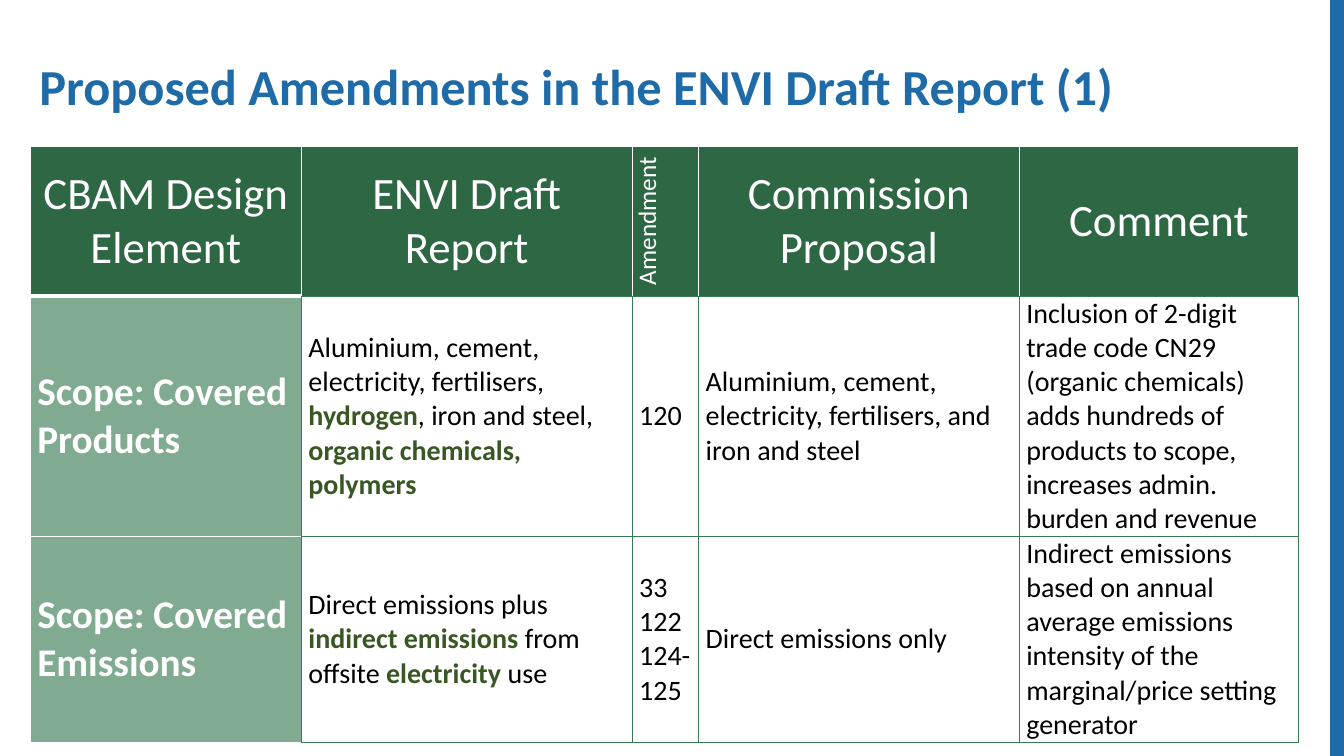
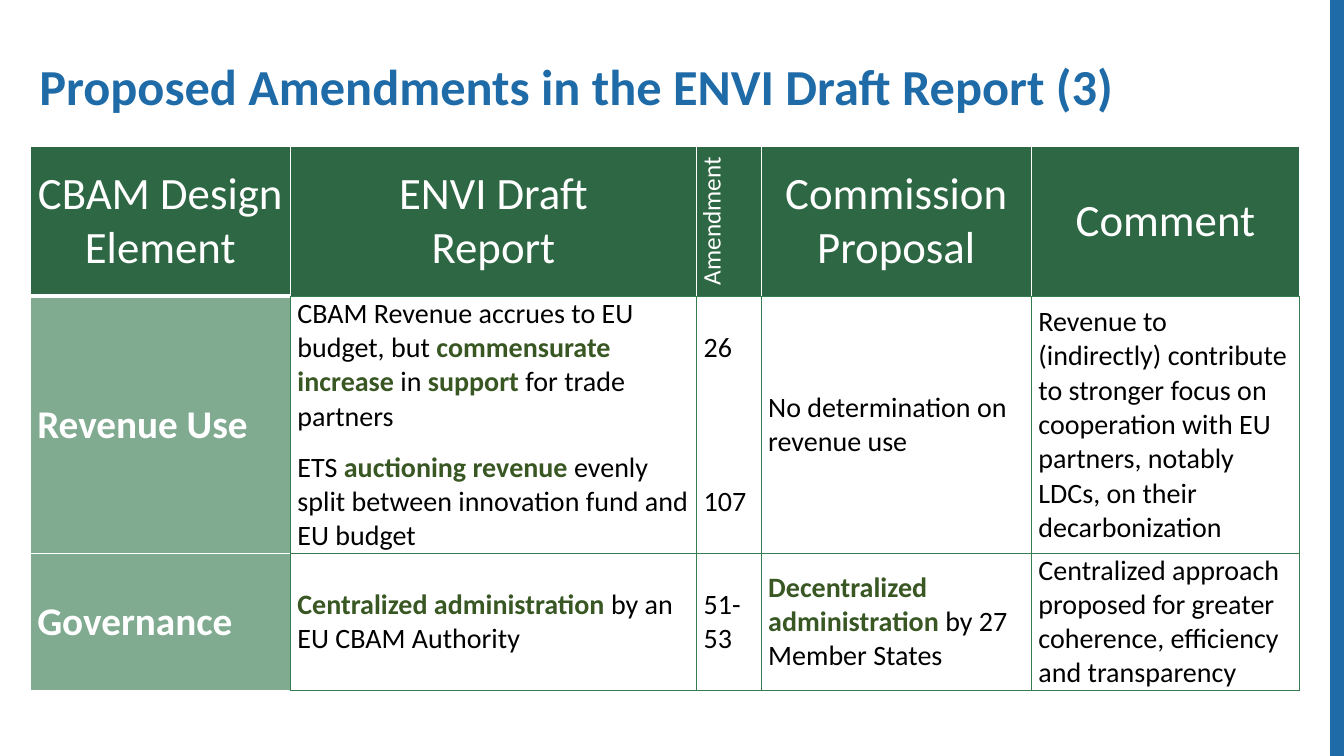
from dataclasses import dataclass

from lxml.etree import SubElement
from pptx import Presentation
from pptx.dml.color import RGBColor
from pptx.enum.shapes import MSO_CONNECTOR
from pptx.enum.text import MSO_ANCHOR, PP_ALIGN
from pptx.oxml.ns import qn
from pptx.slide import Slide
from pptx.table import _Cell
from pptx.text.text import _Paragraph
from pptx.util import Inches, Pt

COLORS = {
    "title": "1F6BA7",
    "header": "2E6743",
    "grid": "377B51",
    "emphasis": "385723",
    "text": "000000",
    "white": "FFFFFF",
}
FONT = "Calibri"
HEADERS = (
    "CBAM Design Element",
    "ENVI Draft\nReport",
    "Amendment",
    "Commission\nProposal",
    "Comment",
)
AMENDMENT_COLUMN = 2


@dataclass(frozen=True)
class TextStyle:
    size: int
    color: str
    bold: bool = False
    spacing: int = 6
    alignment: PP_ALIGN = PP_ALIGN.LEFT


HEADER_STYLE = TextStyle(32, "white", spacing=3, alignment=PP_ALIGN.CENTER)
AMENDMENT_STYLE = TextStyle(18, "white", spacing=3, alignment=PP_ALIGN.CENTER)
ELEMENT_STYLE = TextStyle(28, "white", bold=True)
BODY_STYLE = TextStyle(20, "text")
TITLE_STYLE = TextStyle(36, "title", bold=True, spacing=8)


@dataclass(frozen=True)
class DesignElement:
    name: str
    draft_report: tuple[str, ...]
    amendments: tuple[str, ...]
    commission_proposal: str
    comment: str
    height: float
    amendment_gap: int = 6


@dataclass(frozen=True)
class ComparisonSlide:
    number: int
    column_widths: tuple[float, ...]
    elements: tuple[DesignElement, ...]


COMPARISONS = (
    ComparisonSlide(
        1,
        (2.69, 3.28, 0.66, 3.18, 2.77),
        (
            DesignElement(
                "Scope: Covered Products",
                ("Aluminium, cement, electricity, fertilisers, *hydrogen*, "
                 "iron and steel, *organic chemicals, polymers*",),
                ("120",),
                "Aluminium, cement, electricity, fertilisers, and iron and steel",
                "Inclusion of 2-digit trade code CN29 (organic chemicals) adds "
                "hundreds of products to scope, increases admin. burden and revenue",
                2.38,
            ),
            DesignElement(
                "Scope: Covered Emissions",
                ("Direct emissions plus *indirect emissions *from offsite "
                 "*electricity* use",),
                ("33\n122 124-125",),
                "Direct emissions only",
                "Indirect emissions based on annual average emissions intensity "
                "of the marginal/price setting generator",
                2.04,
            ),
        ),
    ),
    ComparisonSlide(
        3,
        (2.58, 4.03, 0.64, 2.68, 2.66),
        (
            DesignElement(
                "Revenue Use",
                ("CBAM Revenue accrues to EU budget, but *commensurate increase* "
                 "in *support* for trade partners",
                 "ETS *auctioning revenue *evenly split between innovation fund "
                 "and EU budget"),
                ("26", "107"),
                "No determination on revenue use",
                "Revenue to (indirectly) contribute to stronger focus on "
                "cooperation with EU partners, notably LDCs, on their decarbonization",
                2.55,
                amendment_gap=79,
            ),
            DesignElement(
                "Governance",
                ("*Centralized administration *by an EU CBAM Authority",),
                ("51-53",),
                "*Decentralized administration *by 27 Member States",
                "Centralized approach proposed for greater coherence, efficiency "
                "and transparency",
                1.36,
            ),
        ),
    ),
)


def add_text(paragraph: _Paragraph, text: str, style: TextStyle) -> None:
    paragraph.alignment = style.alignment
    paragraph.space_after = Pt(style.spacing)
    for part_index, part in enumerate(text.split("*")):
        emphasized = part_index % 2 == 1
        for line_index, line in enumerate(part.split("\n")):
            if line_index:
                paragraph.add_line_break()
            if not line:
                continue
            run = paragraph.add_run()
            run.text = line
            run.font.name = FONT
            run.font.size = Pt(style.size)
            run.font.bold = style.bold or emphasized
            color = "emphasis" if emphasized else style.color
            run.font.color.rgb = RGBColor.from_string(COLORS[color])


def set_borders(cell: _Cell, left: str, right: str, top: str, bottom: str,
                bottom_width: int = 1) -> None:
    properties = cell._tc.get_or_add_tcPr()
    sides = (("a:lnL", left, 1), ("a:lnR", right, 1), ("a:lnT", top, 1),
             ("a:lnB", bottom, bottom_width))
    for tag, color, width in sides:
        border = SubElement(properties, qn(tag), w=str(Pt(width)))
        fill = SubElement(border, qn("a:solidFill"))
        SubElement(fill, qn("a:srgbClr"), val=COLORS[color])


def set_fill(cell: _Cell, color: str, opacity: int = 100) -> None:
    cell.fill.solid()
    cell.fill.fore_color.rgb = RGBColor.from_string(COLORS[color])
    if opacity < 100:
        color_element = cell._tc.tcPr.find(qn("a:solidFill")).find(qn("a:srgbClr"))
        SubElement(color_element, qn("a:alpha"), val=str(opacity * 1000))


def write_cell(cell: _Cell, texts: tuple[str, ...], style: TextStyle,
               gap: int = 6) -> None:
    cell.margin_left = cell.margin_right = Inches(0.07)
    cell.margin_top = cell.margin_bottom = Inches(0)
    cell.vertical_anchor = MSO_ANCHOR.MIDDLE
    frame = cell.text_frame
    for index, text in enumerate(texts):
        paragraph = frame.add_paragraph() if index else frame.paragraphs[0]
        paragraph.space_before = Pt(gap if index else 0)
        add_text(paragraph, text, style)


def add_title(slide: Slide, number: int) -> None:
    title = slide.shapes.title
    title.left, title.top = Inches(0.29), Inches(0.46)
    title.width, title.height = Inches(11.96), Inches(0.73)
    frame = title.text_frame
    frame.word_wrap = True
    frame.vertical_anchor = MSO_ANCHOR.TOP
    paragraph = frame.paragraphs[0]
    paragraph.line_spacing = 1.07
    paragraph.space_before = Pt(0)
    add_text(paragraph, f"Proposed Amendments in the ENVI Draft Report ({number})",
             TITLE_STYLE)


def add_comparison_table(slide: Slide, comparison: ComparisonSlide) -> None:
    heights = [1.49] + [element.height for element in comparison.elements]
    table = slide.shapes.add_table(
        len(heights), len(HEADERS), Inches(0.3), Inches(1.45),
        Inches(sum(comparison.column_widths)), Inches(sum(heights)),
    ).table
    table.first_row = False
    table.horz_banding = False
    for column, width in zip(table.columns, comparison.column_widths):
        column.width = Inches(width)
    for row, height in zip(table.rows, heights):
        row.height = Inches(height)

    for index, header in enumerate(HEADERS):
        cell = table.cell(0, index)
        is_amendment = index == AMENDMENT_COLUMN
        write_cell(cell, (header,), AMENDMENT_STYLE if is_amendment else HEADER_STYLE)
        if is_amendment:
            cell._tc.get_or_add_tcPr().set("vert", "vert270")
        bottom, bottom_width = ("grid", 1) if index else ("white", 3)
        set_borders(cell, "white", "white", "white", bottom, bottom_width)
        set_fill(cell, "header")

    for row_index, element in enumerate(comparison.elements, start=1):
        name_cell = table.cell(row_index, 0)
        write_cell(name_cell, (element.name,), ELEMENT_STYLE)
        set_borders(name_cell, "white", "grid", "white", "white")
        set_fill(name_cell, "grid", opacity=63)
        contents = (element.draft_report, element.amendments,
                    (element.commission_proposal,), (element.comment,))
        for column_index, texts in enumerate(contents, start=1):
            cell = table.cell(row_index, column_index)
            is_amendment = column_index == AMENDMENT_COLUMN
            write_cell(cell, texts, BODY_STYLE,
                       element.amendment_gap if is_amendment else 6)
            set_borders(cell, "grid", "grid", "grid", "grid")
            cell.fill.background()


def move_edge_band_to_master(slide: Slide) -> None:
    band = slide.shapes.add_connector(
        MSO_CONNECTOR.STRAIGHT, Inches(13.27), Inches(0), Inches(13.27), Inches(7.5))
    band.line.color.rgb = RGBColor.from_string(COLORS["title"])
    band.line.width = Pt(12)
    SubElement(band.element.spPr, qn("a:effectLst"))
    band.element.nvCxnSpPr.cNvPr.set("id", "20")
    slide.slide_layout.slide_master.shapes.element.append(band.element)


def main() -> None:
    presentation = Presentation()
    presentation.slide_width = Inches(13.33)
    presentation.slide_height = Inches(7.5)
    title_only = presentation.slide_layouts[5]
    for comparison in COMPARISONS:
        slide = presentation.slides.add_slide(title_only)
        add_title(slide, comparison.number)
        add_comparison_table(slide, comparison)
    move_edge_band_to_master(presentation.slides[0])
    presentation.save("out.pptx")


if __name__ == "__main__":
    main()
